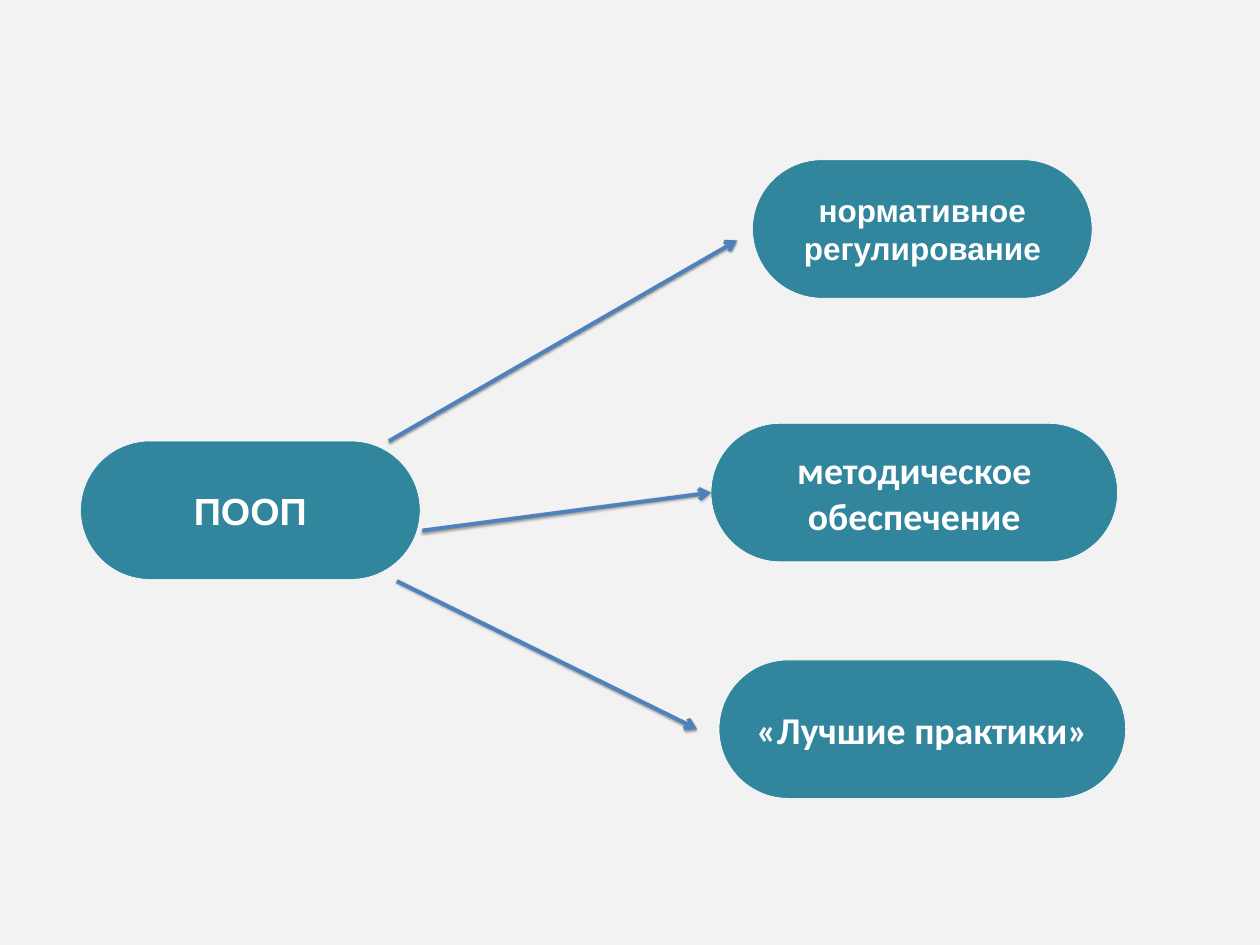
import pptx
import pptx.dml.color
import pptx.enum.shapes
import pptx.enum.text
import pptx.oxml
import pptx.oxml.ns
import pptx.util

Cm = pptx.util.Cm
Pt = pptx.util.Pt

SHADOW = (
    '<a:effectLst %s><a:outerShdw blurRad="40000" dist="20000" dir="5400000" rotWithShape="0">'
    '<a:srgbClr val="000000"><a:alpha val="38000"/></a:srgbClr>'
    '</a:outerShdw></a:effectLst>' % pptx.oxml.ns.nsdecls("a")
)
ARROWHEAD = '<a:tailEnd %s type="arrow"/>' % pptx.oxml.ns.nsdecls("a")


def rgb(code):
    return pptx.dml.color.RGBColor.from_string(code)


def write(frame, text, font="Arial", size=48, color="FFFFFF", bold=True):
    frame.word_wrap = True
    frame.vertical_anchor = pptx.enum.text.MSO_ANCHOR.MIDDLE
    frame.text = text
    for paragraph in frame.paragraphs:
        paragraph.alignment = pptx.enum.text.PP_ALIGN.CENTER
        for run in paragraph.runs:
            run.font.name = font
            run.font.size = Pt(size)
            run.font.bold = bold
            run.font.color.rgb = rgb(color)


class Diagram:
    """Draws pills and arrows in one style on the current slide."""

    background = "F2F2F2"
    pill_fill = "31859C"
    pill_outline = "FFFFFF"
    arrow_color = "4F81BD"
    pill_height = 6.2

    def __init__(self, slide):
        self.slide = slide
        slide.background.fill.solid()
        slide.background.fill.fore_color.rgb = rgb(self.background)

    def pill(self, text, left, top, width, **text_format):
        pill = self.slide.shapes.add_shape(
            pptx.enum.shapes.MSO_SHAPE.ROUNDED_RECTANGLE,
            Cm(left), Cm(top), Cm(width), Cm(self.pill_height))
        pill.adjustments[0] = 0.5
        pill.shadow.inherit = False
        pill.fill.solid()
        pill.fill.fore_color.rgb = rgb(self.pill_fill)
        pill.line.color.rgb = rgb(self.pill_outline)
        pill.line.width = Pt(0.75)
        write(pill.text_frame, text, **text_format)

    def arrow(self, start, end):
        arrow = self.slide.shapes.add_connector(
            pptx.enum.shapes.MSO_CONNECTOR.STRAIGHT,
            *(Cm(value) for value in start + end))
        arrow.line.color.rgb = rgb(self.arrow_color)
        arrow.line.width = Pt(5)
        properties = arrow.element.spPr
        outline = properties.find(pptx.oxml.ns.qn("a:ln"))
        outline.append(pptx.oxml.parse_xml(ARROWHEAD))
        properties.append(pptx.oxml.parse_xml(SHADOW))


def main():
    presentation = pptx.Presentation()
    presentation.slide_width = Cm(56.44)
    presentation.slide_height = Cm(42.34)
    blank = presentation.slide_layouts.get_by_name("Blank")
    diagram = Diagram(presentation.slides.add_slide(blank))

    narrow, wide = 15.21, 18.21
    diagram.pill("ПООП", 3.61, 19.76, narrow)
    diagram.pill("методическое\nобеспечение", 31.85, 18.97, wide, font="Calibri")
    diagram.pill("нормативное регулирование", 33.71, 7.16, narrow, size=40)
    diagram.pill("«Лучшие практики»", 32.21, 29.57, wide, font="Calibri")

    diagram.arrow((17.42, 19.76), (33.02, 10.77))
    diagram.arrow((18.92, 23.77), (31.85, 22.07))
    diagram.arrow((17.78, 26.04), (31.22, 32.66))

    presentation.save("out.pptx")


if __name__ == "__main__":
    main()
